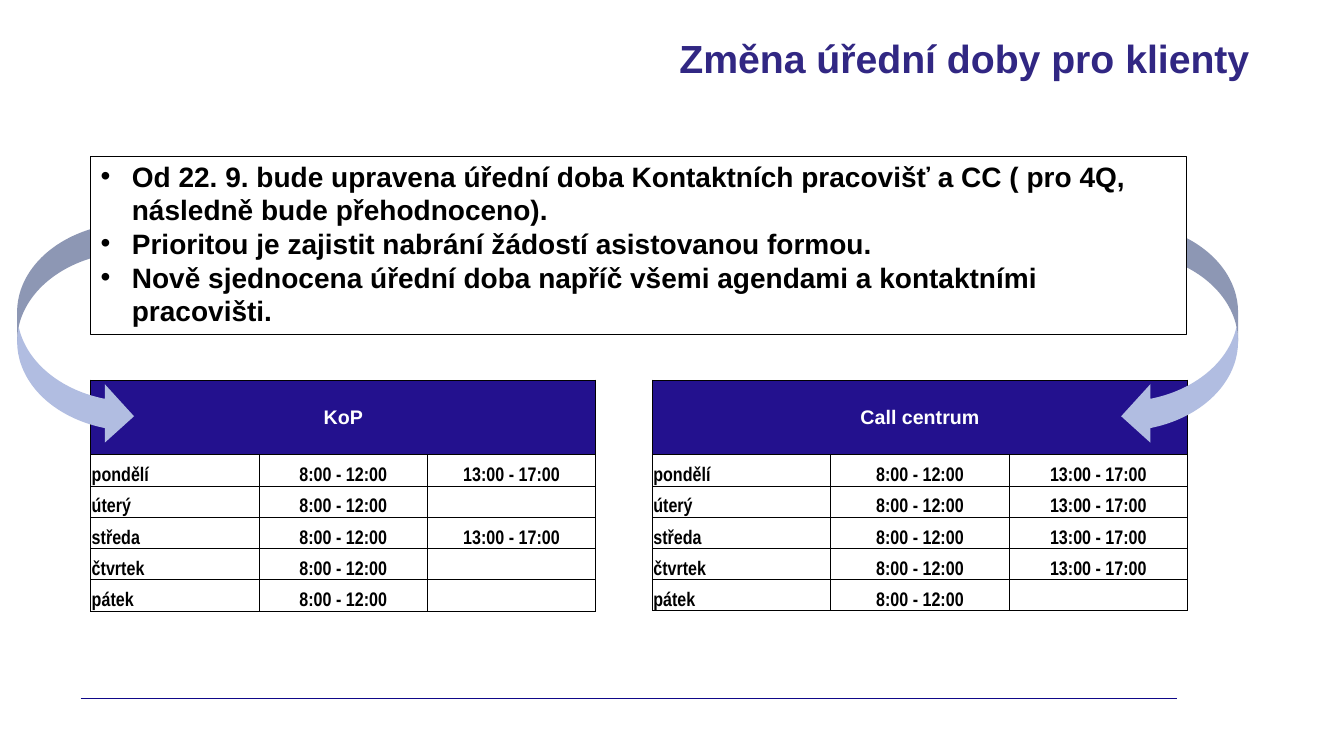
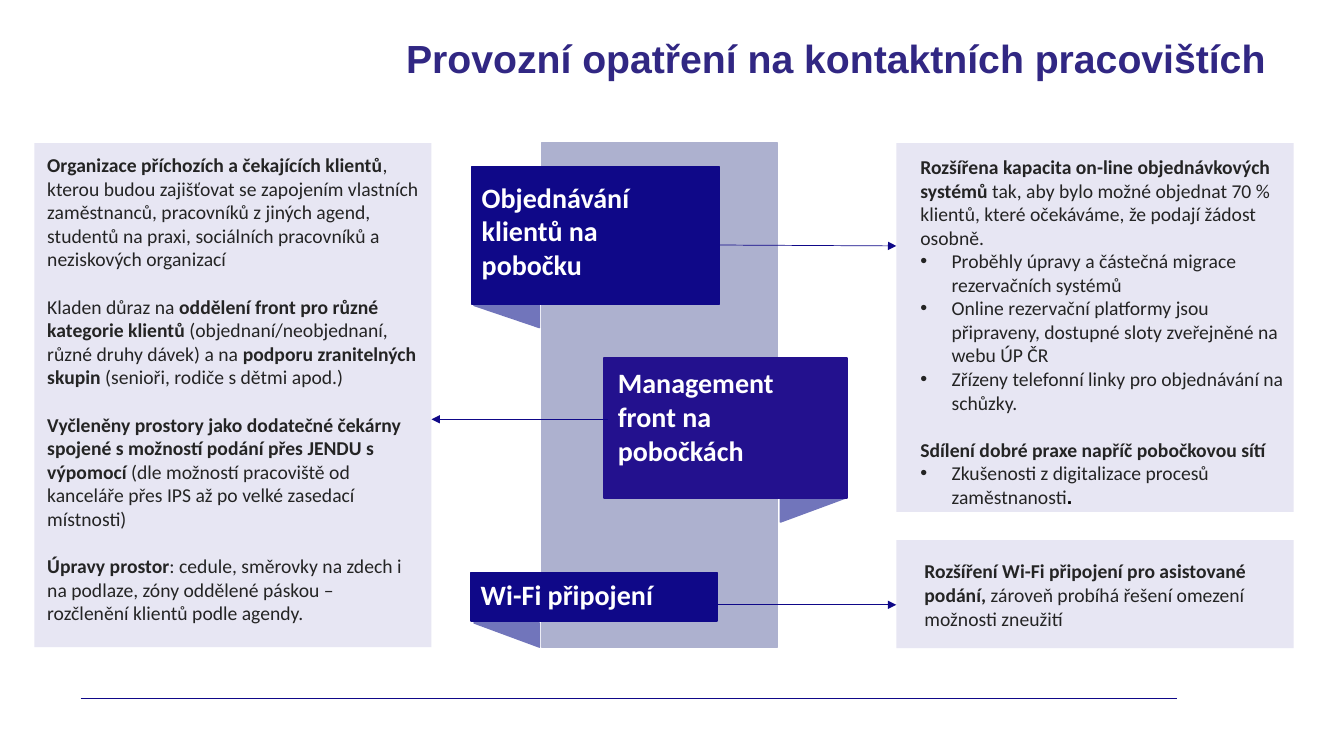
from lxml import etree
from pptx import Presentation
from pptx.dml.color import RGBColor
from pptx.enum.shapes import MSO_CONNECTOR, MSO_SHAPE
from pptx.enum.text import MSO_ANCHOR, PP_ALIGN
from pptx.oxml.ns import qn
from pptx.util import Pt

PX = 9144  # 100 px to the inch
RECT = MSO_SHAPE.RECTANGLE
LABEL = MSO_SHAPE.FLOWCHART_PROCESS
FOLD = MSO_SHAPE.RIGHT_TRIANGLE
CURVE = MSO_SHAPE.CURVED_LEFT_ARROW
STRAIGHT = MSO_CONNECTOR.STRAIGHT
LEFT, CENTER, RIGHT = PP_ALIGN.LEFT, PP_ALIGN.CENTER, PP_ALIGN.RIGHT
MIDDLE, BOTTOM = MSO_ANCHOR.MIDDLE, MSO_ANCHOR.BOTTOM


class Theme:
    title = "312783"
    navy = "0F0888"
    indigo = "23118E"
    fold = "7175BB"
    band = "ADB1CF"
    panel = "E7E6F3"
    curve = "B1BDE1"
    ink = "242424"
    black = "000000"
    white = "FFFFFF"
    head, sans, narrow = "Arial", "Calibri", "Arial Narrow"
    big, mid, small = 28, 20, 14
    gap = 17


def draw(slide, box, kind=None, fill=None, line=None, turn=0, flip=None):
    """Add a preset shape, or a text box when no kind is given."""
    area = [n * PX for n in box]
    if kind is None:
        shape = slide.shapes.add_textbox(*area)
    else:
        shape = slide.shapes.add_shape(kind, *area)
        shape.shadow.inherit = False
        shape.fill.solid()
        shape.fill.fore_color.rgb = RGBColor.from_string(fill)
        if line:
            shape.line.color.rgb = RGBColor.from_string(line)
            shape.line.width = Pt(1)
        else:
            shape.line.fill.background()
        shape.rotation = turn
        if flip:
            shape.element.spPr.find(qn("a:xfrm")).set(flip, "1")
    shape.text_frame.word_wrap = True
    return shape.text_frame


def write(frame, *paras, font=Theme.sans, size=Theme.small, color=Theme.ink,
          bold=False, align=LEFT, gaps=()):
    """Fill a frame; ** toggles bold, a leading • makes a bullet,
    and gaps lists the paragraphs that have space before them."""
    for i, text in enumerate(paras):
        para = frame.paragraphs[0] if i == 0 else frame.add_paragraph()
        para.alignment = align
        if i in gaps:
            para.space_before = Pt(Theme.gap)
        if text.startswith("•"):
            text = text[1:].strip()
            props = para._p.get_or_add_pPr()
            props.set("marL", str(31 * PX))
            props.set("indent", str(-31 * PX))
            etree.SubElement(props, qn("a:buFont")).set("typeface", "Arial")
            etree.SubElement(props, qn("a:buChar")).set("char", "•")
        for j, part in enumerate(text.split("**")):
            if part:
                run = para.add_run()
                run.text = part
                run.font.name = font
                run.font.size = Pt(size)
                run.font.bold = bold or j % 2 == 1
                run.font.color.rgb = RGBColor.from_string(color)


deck = Presentation()
deck.slide_width, deck.slide_height = 1333 * PX, 750 * PX
blank = deck.slide_layouts[6]
hours, steps = [deck.slides.add_slide(blank) for _ in range(2)]

# Shared titles
for slide, width, title in (
    (hours, 1174, "Změna úřední doby pro klienty"),
    (steps, 1190, "Provozní opatření na kontaktních pracovištích"),
):
    write(draw(slide, (75, 29, width, 57)), title, font=Theme.head,
          size=Theme.big, color=Theme.title, bold=True, align=RIGHT)

# Office hours tables
days = ("pondělí", "úterý", "středa", "čtvrtek", "pátek")
for left, col, name, late in (
    (90, 167, "KoP", ("pondělí", "středa")),
    (647, 177, "Call centrum", days[:4]),
):
    rows = [(name, "", "")]
    rows += [(day, "8:00 - 12:00", "13:00 - 17:00" if day in late else "")
             for day in days]
    table = slide_table = hours.shapes.add_table(
        len(rows), 3, left * PX, 377 * PX, 3 * col * PX, 229 * PX).table
    table.first_row = table.horz_banding = False
    for column in table.columns:
        column.width = col * PX
    for r, row in enumerate(rows):
        table.rows[r].height = (31 if r else 74) * PX
        for c, text in enumerate(row):
            cell = table.cell(r, c)
            cell.margin_left = cell.margin_right = cell.margin_top = PX
            cell.margin_bottom = 0
            cell.vertical_anchor = BOTTOM if r else MIDDLE
            props = cell._tc.get_or_add_tcPr()
            for side in ("a:lnL", "a:lnR", "a:lnT", "a:lnB"):
                edge = etree.SubElement(props, qn(side), w=str(Pt(0.5)))
                paint = etree.SubElement(edge, qn("a:solidFill"))
                etree.SubElement(paint, qn("a:srgbClr"), val=Theme.black)
            if r:
                cell.fill.background()
            else:
                cell.fill.solid()
                cell.fill.fore_color.rgb = RGBColor.from_string(Theme.indigo)
            write(cell.text_frame, text, bold=True,
                  font=Theme.narrow if r else Theme.head,
                  color=Theme.black if r else Theme.white,
                  align=LEFT if r and c == 0 else CENTER)
    table.cell(0, 0).merge(table.cell(0, 2))

# Curved arrows behind the notice
for left, flip in ((1112, None), (17, "flipH")):
    draw(hours, (left, 221, 116, 221), CURVE, Theme.curve, flip=flip)
draw(hours, (90, 155, 1087, 177), RECT, Theme.white, Theme.black)
write(
    draw(hours, (90, 153, 1087, 178)),
    "• Od 22. 9. bude upravena úřední doba Kontaktních pracovišť a CC "
    "( pro 4Q, následně bude přehodnoceno).",
    "• Prioritou je zajistit nabrání žádostí asistovanou formou.",
    "• Nově sjednocena úřední doba napříč všemi agendami a kontaktními "
    "pracovišti.",
    font=Theme.head, size=Theme.mid, color=Theme.black, bold=True)

# Side panels
for box in ((889, 536, 394, 107), (889, 142, 394, 366), (34, 142, 394, 500)):
    draw(steps, box, RECT, Theme.panel)

online = draw(steps, (903, 149, 392, 353))
write(
    online,
    "**Rozšířena kapacita on-line objednávkových systémů** tak, aby bylo "
    "možné objednat 70 % klientů, které očekáváme, že podají žádost osobně.",
    "• Proběhly úpravy a částečná migrace rezervačních systémů",
    "• Online rezervační platformy jsou připraveny, dostupné sloty "
    "zveřejněné na webu ÚP ČR",
    "• Zřízeny telefonní linky pro objednávání na schůzky.",
    "**Sdílení dobré praxe napříč pobočkovou sítí**",
    "• Zkušenosti z digitalizace procesů zaměstnanosti",
    gaps=(4,))
dot = online.paragraphs[-1].add_run()
dot.text = "."
dot.font.name, dot.font.size, dot.font.bold = Theme.head, Pt(Theme.small), True
dot.font.color.rgb = RGBColor.from_string(Theme.black)

write(
    draw(steps, (37, 147, 389, 483)),
    "**Organizace příchozích a čekajících klientů**, kterou budou "
    "zajišťovat se zapojením vlastních zaměstnanců, pracovníků z jiných "
    "agend, studentů na praxi, sociálních pracovníků a neziskových organizací",
    "Kladen důraz na **oddělení front pro různé kategorie klientů** "
    "(objednaní/neobjednaní, různé druhy dávek) a na **podporu "
    "zranitelných skupin** (senioři, rodiče s dětmi apod.)",
    "**Vyčleněny prostory jako dodatečné čekárny spojené s možností podání "
    "přes JENDU s výpomocí** (dle možností pracoviště od kanceláře přes IPS "
    "až po velké zasedací místnosti)",
    "**Úpravy prostor**: cedule, směrovky na zdech i na podlaze, zóny "
    "oddělené páskou – rozčlenění klientů podle agendy.",
    gaps=(1, 2, 3))
write(
    draw(steps, (907, 550, 359, 81)),
    "**Rozšíření Wi-Fi připojení pro asistované podání,** zároveň probíhá "
    "řešení omezení možnosti zneužití")

# Central band with folded labels
draw(steps, (537, 142, 234, 500), RECT, Theme.band, Theme.band)
for box, turn, flip in (
    ((470, 303, 65, 22), 180, None),
    ((774, 494, 65, 24), 0, "flipV"),
    ((470, 618, 65, 24), 180, None),
):
    draw(steps, box, FOLD, Theme.fold, Theme.fold, turn, flip)
for box, fill, area, text in (
    ((468, 165, 245, 137), Theme.navy, (468, 174, 240, 114),
     "Objednávání klientů na pobočku"),
    ((599, 355, 241, 139), Theme.indigo, (603, 358, 236, 116),
     "Management front na pobočkách"),
    ((467, 568, 244, 48), Theme.navy, (467, 568, 237, 48),
     "Wi-Fi připojení"),
):
    draw(steps, box, LABEL, fill, fill)
    write(draw(steps, area), text, size=Theme.mid, color=Theme.white,
          bold=True)

# Footer rules and arrows
rule = (80, 693, 1167, 693)
for slide, ends, arrow in (
    (hours, rule, False),
    (steps, rule, False),
    (steps, (692, 600, 889, 600), True),
    (steps, (697, 243, 889, 244), True),
    (steps, (603, 416, 428, 416), True),
):
    link = slide.shapes.add_connector(STRAIGHT, *[n * PX for n in ends])
    link.line.color.rgb = RGBColor.from_string(Theme.navy)
    link.line.width = Pt(0.5 if arrow else 1)
    props = link.element.spPr
    if arrow:
        etree.SubElement(props.find(qn("a:ln")), qn("a:tailEnd"),
                         type="triangle")
    etree.SubElement(props, qn("a:effectLst"))

deck.save("out.pptx")
